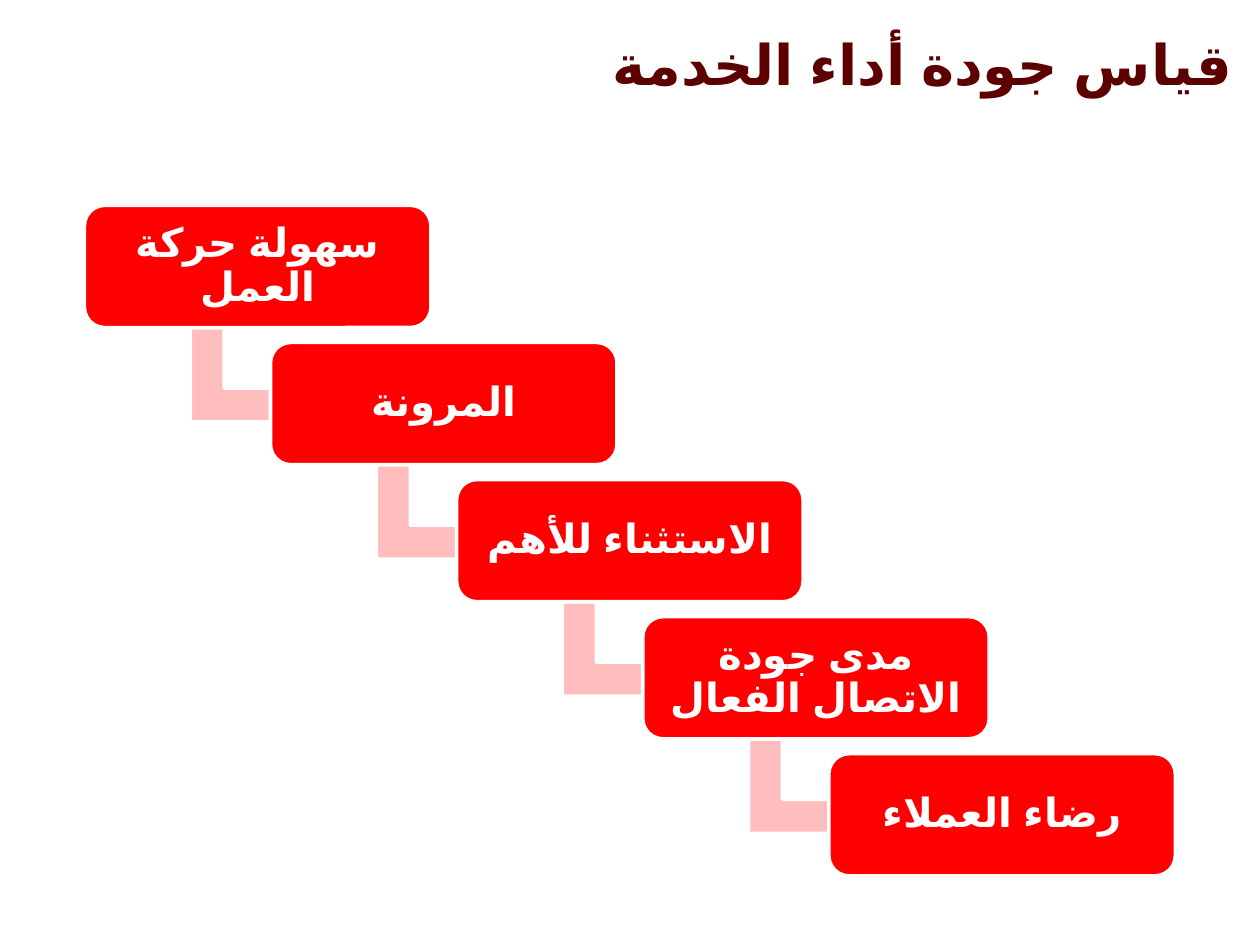
from pptx import Presentation
from pptx.dml.color import RGBColor
from pptx.enum.lang import MSO_LANGUAGE_ID
from pptx.enum.shapes import MSO_SHAPE
from pptx.enum.text import MSO_ANCHOR, MSO_AUTO_SIZE, PP_ALIGN
from pptx.util import Inches, Pt

TITLE = "قياس جودة أداء الخدمة"
STEPS = [
    "سهولة حركة العمل",
    "المرونة",
    "الاستثناء للأهم",
    "مدى جودة الاتصال الفعال",
    "رضاء العملاء",
]
THEME = {
    "font": "Calibri",
    "title": RGBColor(0x5C, 0x00, 0x00),
    "box": RGBColor(0xFF, 0x00, 0x00),
    "arrow": RGBColor(0xFF, 0xBD, 0xBD),
    "white": RGBColor(0xFF, 0xFF, 0xFF),
    "title_size": 32,
    "step_size": 23,
    "line": 2,
}
LEFT, TOP = 0.67, 1.63
STEP_X, STEP_Y = 1.477, 1.088
BOX_W, BOX_H = 2.75, 0.97
ARROW_X, ARROW_Y = 0.9, 0.91
ARROW_W, ARROW_H = 0.82, 0.94


def write(frame, text, size, color, align):
    """Fill a frame with one bold right-to-left paragraph."""
    frame.word_wrap = True
    frame.auto_size = MSO_AUTO_SIZE.NONE
    frame.vertical_anchor = MSO_ANCHOR.MIDDLE
    para = frame.paragraphs[0]
    para.alignment = align
    para._p.get_or_add_pPr().set("rtl", "1")
    run = para.add_run()
    run.text = text
    font = run.font
    font.name, font.size, font.bold = THEME["font"], Pt(size), True
    font.language_id = MSO_LANGUAGE_ID.ARABIC_EGYPT
    font.color.rgb = color
    return para


def draw(slide, kind, x, y, w, h, fill, adjust):
    shape = slide.shapes.add_shape(kind, Inches(x), Inches(y), Inches(w), Inches(h))
    shape.shadow.inherit = False
    shape.fill.solid()
    shape.fill.fore_color.rgb = fill
    shape.line.color.rgb = THEME["white"]
    shape.line.width = Pt(THEME["line"])
    for i, value in enumerate(adjust):
        shape.adjustments[i] = value
    return shape


def add_step(slide, i, text):
    x, y = LEFT + i * STEP_X, TOP + i * STEP_Y
    if i < len(STEPS) - 1:
        arrow = draw(slide, MSO_SHAPE.BENT_UP_ARROW, x + ARROW_X, y + ARROW_Y,
                     ARROW_W, ARROW_H, THEME["arrow"], (0.328, 0.25, 0.358))
        arrow.rotation = 90
    box = draw(slide, MSO_SHAPE.ROUNDED_RECTANGLE, x, y, BOX_W, BOX_H,
               THEME["box"], (0.167,))
    frame = box.text_frame
    frame.margin_left = frame.margin_right = Inches(0.1)
    frame.margin_top = frame.margin_bottom = Inches(0.1)
    para = write(frame, text, THEME["step_size"], THEME["white"], PP_ALIGN.CENTER)
    para.line_spacing = 0.9


def main():
    deck = Presentation()
    deck.slide_width, deck.slide_height = Inches(10), Inches(7.5)
    slide = deck.slides.add_slide(deck.slide_layouts[5])
    title = slide.shapes.title
    title.left, title.top = Inches(1.38), Inches(0.05)
    title.width, title.height = Inches(8.5), Inches(0.9)
    write(title.text_frame, TITLE, THEME["title_size"], THEME["title"], PP_ALIGN.RIGHT)
    for i, text in enumerate(STEPS):
        add_step(slide, i, text)
    deck.save("out.pptx")


if __name__ == "__main__":
    main()
